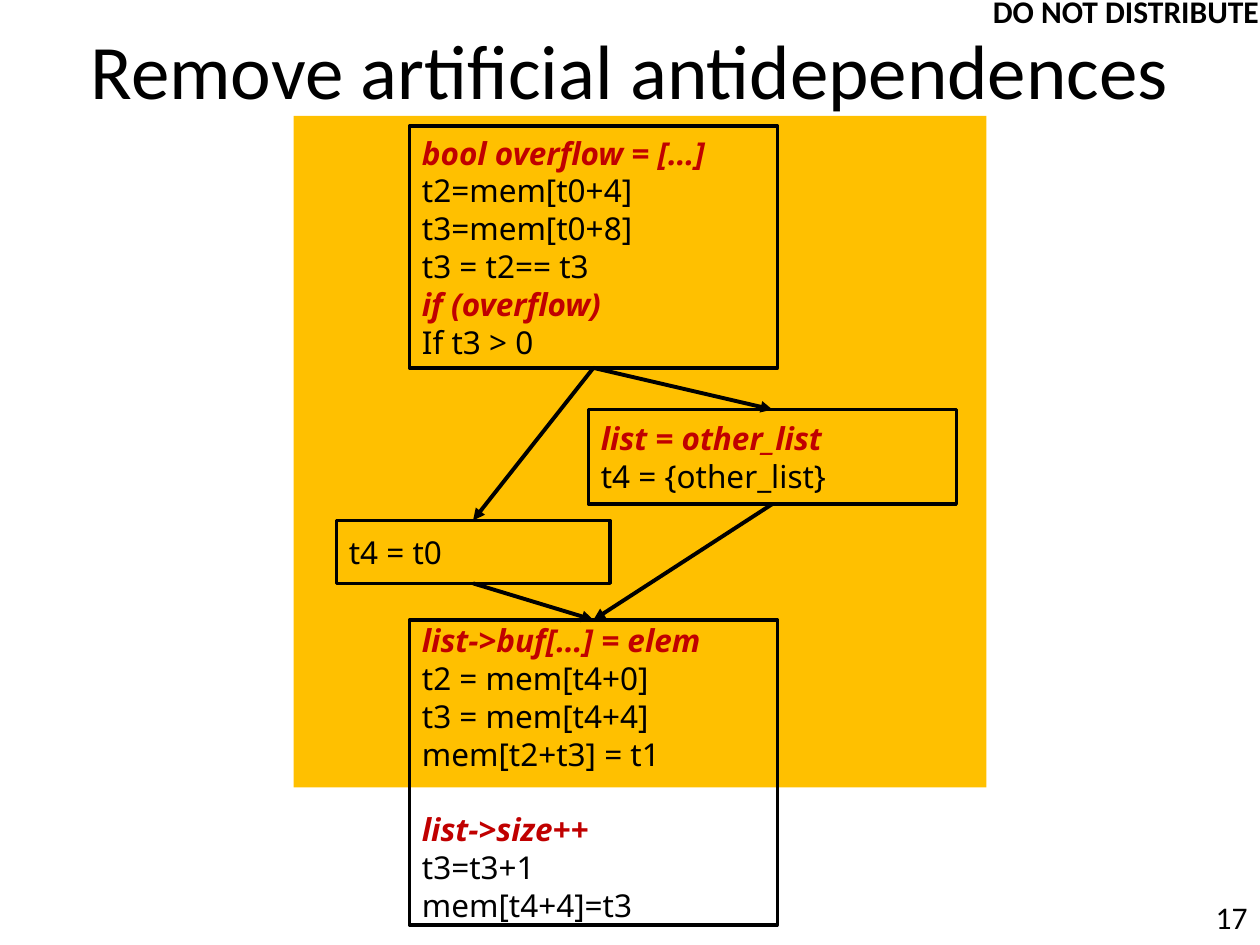
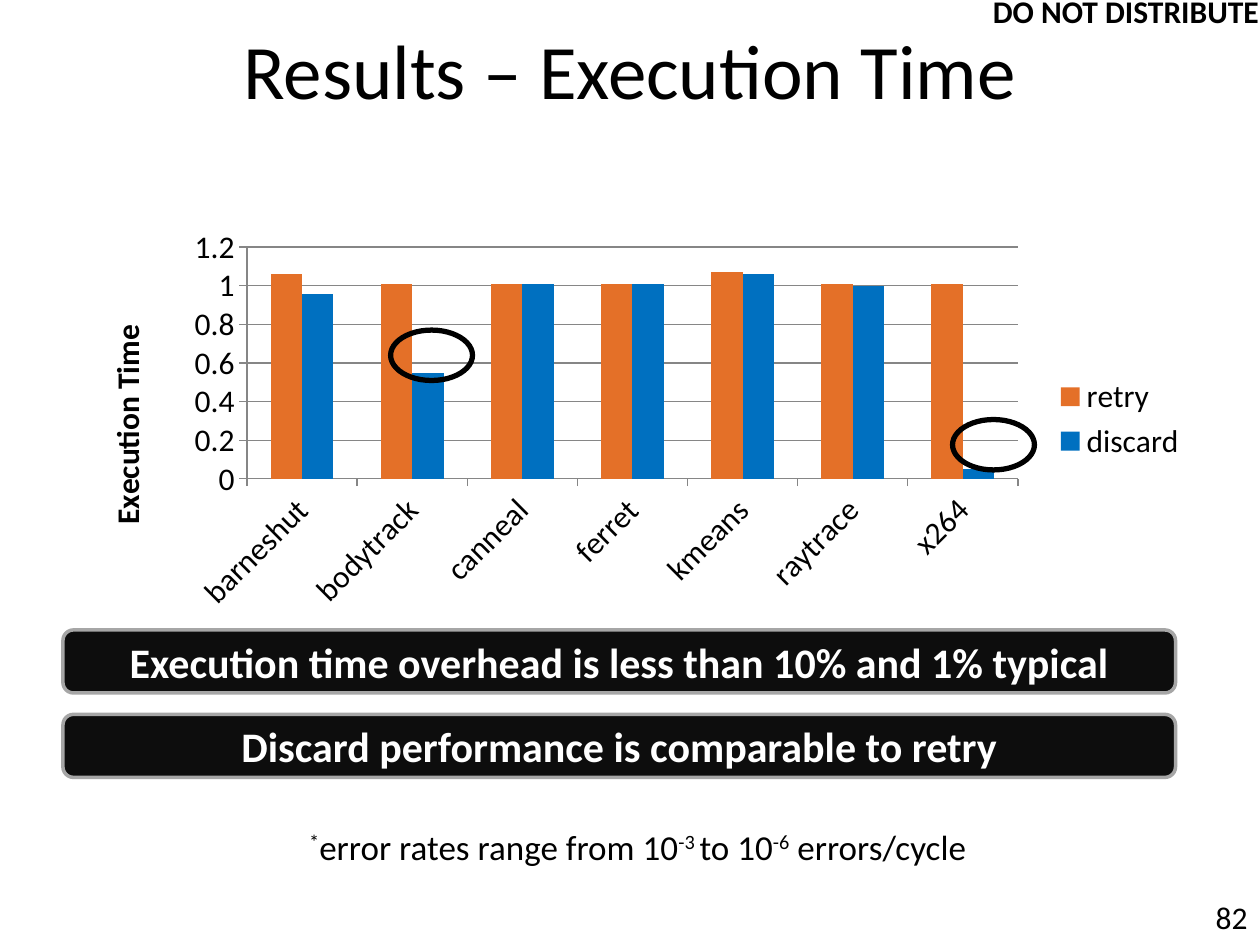
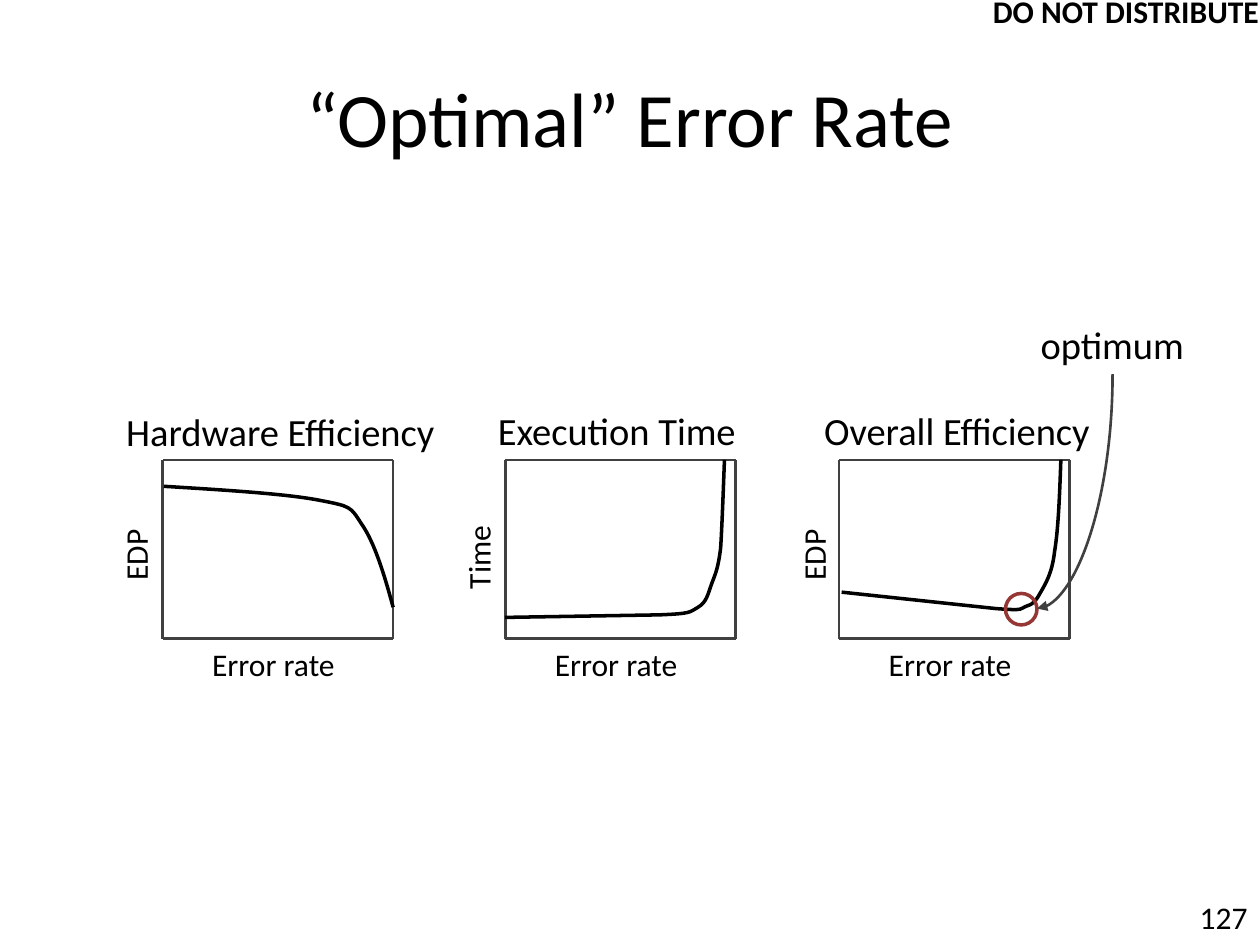
from lxml import etree
from pptx import Presentation, util as u
from pptx.chart.data import CategoryChartData
from pptx.dml.color import RGBColor
from pptx.enum import chart as charts, shapes as kinds, text as texts
from pptx.oxml.ns import qn

colour = RGBColor.from_string
BLACK, RED, AMBER, GREY, DARK = "000000", "C00000", "FFC000", "868686", "404040"
RECTANGLE = kinds.MSO_SHAPE.RECTANGLE
ELLIPSE = kinds.MSO_SHAPE.OVAL
LEFT, CENTER, RIGHT = texts.PP_ALIGN.LEFT, texts.PP_ALIGN.CENTER, texts.PP_ALIGN.RIGHT
MIDDLE, TOP = texts.MSO_ANCHOR.MIDDLE, texts.MSO_ANCHOR.TOP


def add_box(slide, at, paragraphs=(), preset=None, fill=None, line=None, width=2,
            align=LEFT, anchor=TOP, wrap=True, **font):
    """Add a preset shape, or a text box if there is no preset.

    Each paragraph is a list of (text, font changes) runs.
    """
    place = [u.Inches(length) for length in at]
    if preset is None:
        shape = slide.shapes.add_textbox(*place)
    else:
        shape = slide.shapes.add_shape(preset, *place)
        shape.shadow.inherit = False
        if fill:
            shape.fill.solid()
            shape.fill.fore_color.rgb = colour(fill)
        else:
            shape.fill.background()
        if line:
            shape.line.color.rgb = colour(line)
            shape.line.width = u.Pt(width)
        else:
            shape.line.fill.background()
    frame = shape.text_frame
    frame.word_wrap = wrap
    frame.vertical_anchor = anchor
    for index, runs in enumerate(paragraphs):
        paragraph = frame.add_paragraph() if index else frame.paragraphs[0]
        paragraph.alignment = align
        for text, changes in runs:
            values = {"name": "Calibri", "size": 18, "color": BLACK, **font, **changes}
            run = paragraph.add_run()
            run.text = text
            run.font.color.rgb = colour(values.pop("color"))
            run.font.size = u.Pt(values.pop("size"))
            if values.pop("raised", False):
                run.font._element.set("baseline", "30000")
            for name, value in values.items():
                setattr(run.font, name, value)
    return shape


def add_line(shapes, start, end, color, width, arrow=False, kind=kinds.MSO_CONNECTOR.STRAIGHT):
    connector = shapes.add_connector(kind, *[u.Inches(length) for length in (*start, *end)])
    connector.line.color.rgb = colour(color)
    connector.line.width = u.Pt(width)
    if arrow:
        etree.SubElement(connector.line._get_or_add_ln(), qn("a:tailEnd"), type="triangle")
    etree.SubElement(connector._element.spPr, qn("a:effectLst"))
    return connector


presentation = Presentation()
presentation.slide_width, presentation.slide_height = u.Inches(10), u.Inches(7.5)

# Shared title, marking and slide number
slides = []
for title, title_top, number in [
    ("Remove artificial antidependences", -0.08, "17"),
    ("Results – Execution Time", -0.08, "82"),
    ("“Optimal” Error Rate", 0.3, "127"),
]:
    slide = presentation.slides.add_slide(presentation.slide_layouts[6])
    add_box(slide, (7.83, 7.08, 2.17, 0.42), [[(number, {})]], align=RIGHT)
    add_box(slide, (6.09, -0.11, 4, 0.4), [[("DO NOT DISTRIBUTE", {})]], align=RIGHT, bold=True)
    add_box(slide, (0.5, title_top, 9, 1.25), [[(title, {})]],
            align=CENTER, anchor=MIDDLE, size=44)
    slides.append(slide)
flow_slide, results_slide, rate_slide = slides

# Control flow: source statements in red above the instructions they become
add_box(flow_slide, (2.33, 0.92, 5.5, 5.33), preset=RECTANGLE, fill=AMBER)
source_lines = {"bool overflow = […]", "if (overflow)", "list = other_list",
                "list->buf[…] = elem", "list->size++"}
source_font = {"color": RED, "bold": True, "italic": True}
blocks = {}
for name, at, lines in [
    ("entry", (3.25, 1, 2.92, 1.92),
     ["bool overflow = […]", "t2=mem[t0+4]", "t3=mem[t0+8]", "t3 = t2== t3",
      "if (overflow)", "If t3 > 0"]),
    ("overflow", (4.67, 3.25, 2.92, 0.75), ["list = other_list", "t4 = {other_list}"]),
    ("normal", (2.67, 4.13, 2.17, 0.5), ["t4 = t0"]),
    ("store", (3.25, 4.92, 2.92, 2.42),
     ["list->buf[…] = elem", "t2 = mem[t4+0]", "t3 = mem[t4+4]", "mem[t2+t3] = t1",
      "list->size++", "t3=t3+1", "mem[t4+4]=t3"]),
]:
    runs = [[(line, source_font if line in source_lines else {})] for line in lines]
    blocks[name] = add_box(flow_slide, at, runs, RECTANGLE, line=BLACK,
                           anchor=MIDDLE, name="Noto Sans")
blocks["store"].text_frame.paragraphs[4].space_before = u.Pt(21.6)

for origin, target in [("entry", "overflow"), ("entry", "normal"),
                       ("normal", "store"), ("overflow", "store")]:
    arrow = add_line(flow_slide.shapes, (0, 0), (1, 1), BLACK, 2.25, arrow=True)
    arrow.begin_connect(blocks[origin], 2)
    arrow.end_connect(blocks[target], 0)

# Execution time chart
data = CategoryChartData()
data.categories = ["barneshut", "bodytrack", "canneal", "ferret", "kmeans", "raytrace", "x264"]
data.add_series("retry", [1.06, 1.01, 1.01, 1.01, 1.07, 1.01, 1.01])
data.add_series("discard", [0.96, 0.55, 1.01, 1.01, 1.06, 1, 0.05])
chart = results_slide.shapes.add_chart(
    charts.XL_CHART_TYPE.COLUMN_CLUSTERED,
    *[u.Inches(length) for length in (0.52, 1.74, 9, 3.17)], data).chart
chart.font.name, chart.font.size = "Calibri", u.Pt(18)
chart.font.color.rgb = colour(BLACK)
chart.has_title = False
chart.has_legend = True
chart.legend.position = charts.XL_LEGEND_POSITION.RIGHT
chart.legend.include_in_layout = False

plot = chart.plots[0]
plot.vary_by_categories = False
plot.gap_width, plot.overlap = 150, 0
for series, color in zip(plot.series, ["E47028", "0070C0"]):
    series.format.fill.solid()
    series.format.fill.fore_color.rgb = colour(color)

values, categories = chart.value_axis, chart.category_axis
for name, value in {"minimum_scale": 0, "maximum_scale": 1.2, "major_unit": 0.2,
                    "has_major_gridlines": True}.items():
    setattr(values, name, value)
for line in (values.format.line, categories.format.line, values.major_gridlines.format.line):
    line.color.rgb = colour(GREY)
    line.width = u.Pt(0.75)
for axis in (values, categories):
    axis.major_tick_mark = charts.XL_TICK_MARK.OUTSIDE
    axis.tick_labels.font.size = u.Pt(18)
categories._element.find(qn("c:txPr")).find(qn("a:bodyPr")).set("rot", "-2700000")

axis_title = values.axis_title
axis_title.text_frame.text = "Execution Time"
axis_title.text_frame._txBody.bodyPr.set("rot", "-5400000")
title_font = axis_title.text_frame.paragraphs[0].runs[0].font
title_font.size, title_font.bold = u.Pt(18), True

for element, places in [
    (chart._chartSpace.chart.plotArea, {"x": 0.16, "y": 0.07, "w": 0.68, "h": 0.58}),
    (axis_title._element, {"x": 0.03, "y": 0.25}),
]:
    layout = element.find(qn("c:layout"))
    if layout is None:
        layout = etree.Element(qn("c:layout"))
        element.insert(0, layout)
    manual = etree.SubElement(layout, qn("c:manualLayout"))
    if "w" in places:
        etree.SubElement(manual, qn("c:layoutTarget"), val="inner")
    for key in ("x", "y"):
        etree.SubElement(manual, qn(f"c:{key}Mode"), val="edge")
    for key, value in places.items():
        etree.SubElement(manual, qn(f"c:{key}"), val=str(value))

footnote = [("*", True), ("error rates range from 10", False), ("-3 ", True),
            ("to 10", False), ("-6", True), (" errors/cycle", False)]
add_box(results_slide, (2.3, 6.5, 5.52, 0.44),
        [[(text, {"raised": raised}) for text, raised in footnote]],
        align=CENTER, wrap=False, size=20)
for left, top in [(7.56, 3.33), (3.1, 2.62)]:
    add_box(results_slide, (left, top, 0.65, 0.4), preset=ELLIPSE, line=BLACK, width=3)
for top, finding in [(5, "Execution time overhead is less than 10% and 1% typical"),
                     (5.67, "Discard performance is comparable to retry")]:
    add_box(results_slide, (0.5, top, 8.83, 0.5), [[(finding, {})]],
            kinds.MSO_SHAPE.ROUNDED_RECTANGLE, fill="0D0D0D", line="A6A6A6",
            align=CENTER, anchor=MIDDLE, size=24, bold=True, color="FFFFFF")

# Sketched plots: each curve is a start point, then three points per Bézier segment
frame_top, frame_bottom, frame_width = 3.65, 5.07, 1.83
for left, heading, heading_at, label, label_at, curve in [
    (1.29, "Hardware Efficiency", (0.7, 3.19, 3.05, 0.47), "EDP", (0.77, 4.2, 0.61, 0.4),
     [(1.3, 3.86), (1.79, 3.89), (2.27, 3.92), (2.53, 3.97), (2.79, 4.02), (2.78, 4.02),
      (2.87, 4.16), (2.97, 4.3), (3.05, 4.56), (3.12, 4.82)]),
    (4.01, "Execution Time", (3.62, 3.18, 2.55, 0.47), "Time", (3.44, 4.22, 0.71, 0.4),
     [(4.01, 4.9), (4.01, 4.9), (5.23, 4.88), (5.23, 4.88), (5.49, 4.87), (5.47, 4.86),
      (5.54, 4.82), (5.61, 4.78), (5.62, 4.71), (5.65, 4.63), (5.68, 4.55), (5.7, 4.51),
      (5.72, 4.35), (5.73, 4.19), (5.74, 3.92), (5.75, 3.65)]),
    (6.66, "Overall Efficiency", (6.32, 3.18, 2.55, 0.47), "EDP", (6.15, 4.2, 0.61, 0.4),
     [(6.68, 4.7), (6.68, 4.7), (7.9, 4.83), (7.9, 4.83), (8.15, 4.85), (8.09, 4.83),
      (8.15, 4.81), (8.21, 4.79), (8.22, 4.77), (8.26, 4.7), (8.3, 4.63), (8.35, 4.55),
      (8.37, 4.38), (8.4, 4.2), (8.41, 3.93), (8.42, 3.65)]),
]:
    group = rate_slide.shapes.add_group_shape()
    right = left + frame_width
    corners = [(left, frame_top), (left, frame_bottom), (right, frame_bottom), (right, frame_top)]
    for start, end in zip(corners, corners[1:] + corners[:1]):
        add_line(group.shapes, start, end, DARK, 1.5)

    points = [(u.Inches(x), u.Inches(y)) for x, y in curve]
    builder = group.shapes.build_freeform(*points[0])
    builder.add_line_segments(points[1:], close=False)
    trend = builder.convert_to_shape()
    trend.shadow.inherit = False
    trend.fill.background()
    trend.line.color.rgb = colour(BLACK)
    trend.line.width = u.Pt(2)
    outline = next(trend._element.iter(qn("a:path")))
    segments = outline.findall(qn("a:lnTo"))
    for first in range(0, len(segments), 3):
        bezier = etree.SubElement(outline, qn("a:cubicBezTo"))
        for segment in segments[first:first + 3]:
            bezier.append(segment[0])
            outline.remove(segment)

    add_box(rate_slide, (left + 0.17, 5.07, 1.42, 0.4), [[("Error rate", {})]], align=CENTER)
    add_box(rate_slide, label_at, [[(label, {})]], wrap=False).rotation = 270
    add_box(rate_slide, heading_at, [[(heading, {})]], align=CENTER, size=22)

add_box(rate_slide, (7.98, 4.71, 0.25, 0.25), preset=ELLIPSE, line="953735")
add_box(rate_slide, (8.16, 2.5, 1.35, 0.47), [[("optimum", {})]], wrap=False, size=22)
pointer = add_line(rate_slide.shapes, (7.6, 3.6), (9.46, 4.2), DARK, 1.5, arrow=True,
                   kind=kinds.MSO_CONNECTOR.CURVE)
pointer._element.spPr.find(qn("a:prstGeom")).set("prst", "curvedConnector2")
pointer._element.spPr.find(qn("a:xfrm")).set("rot", "5400000")

presentation.save("out.pptx")
